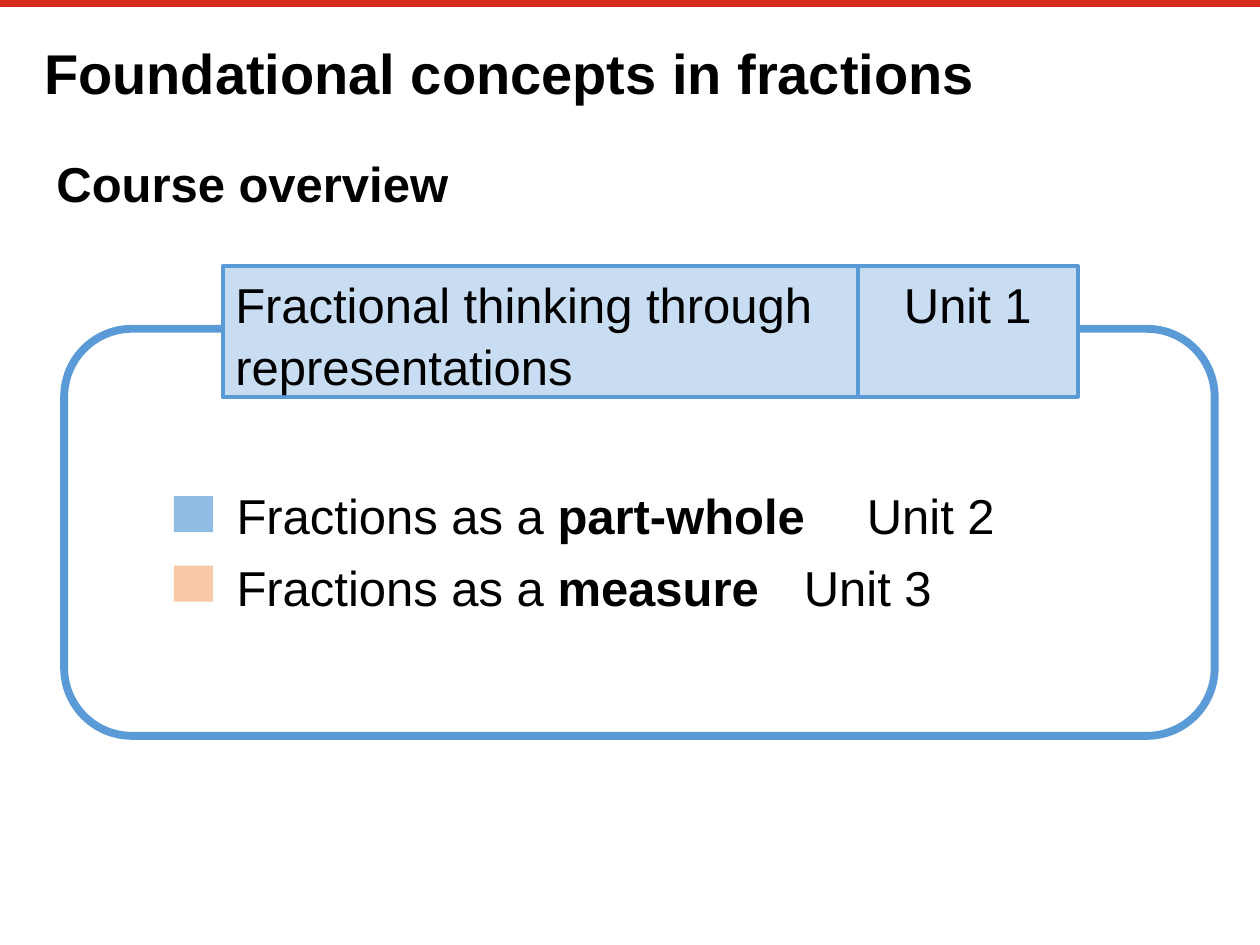
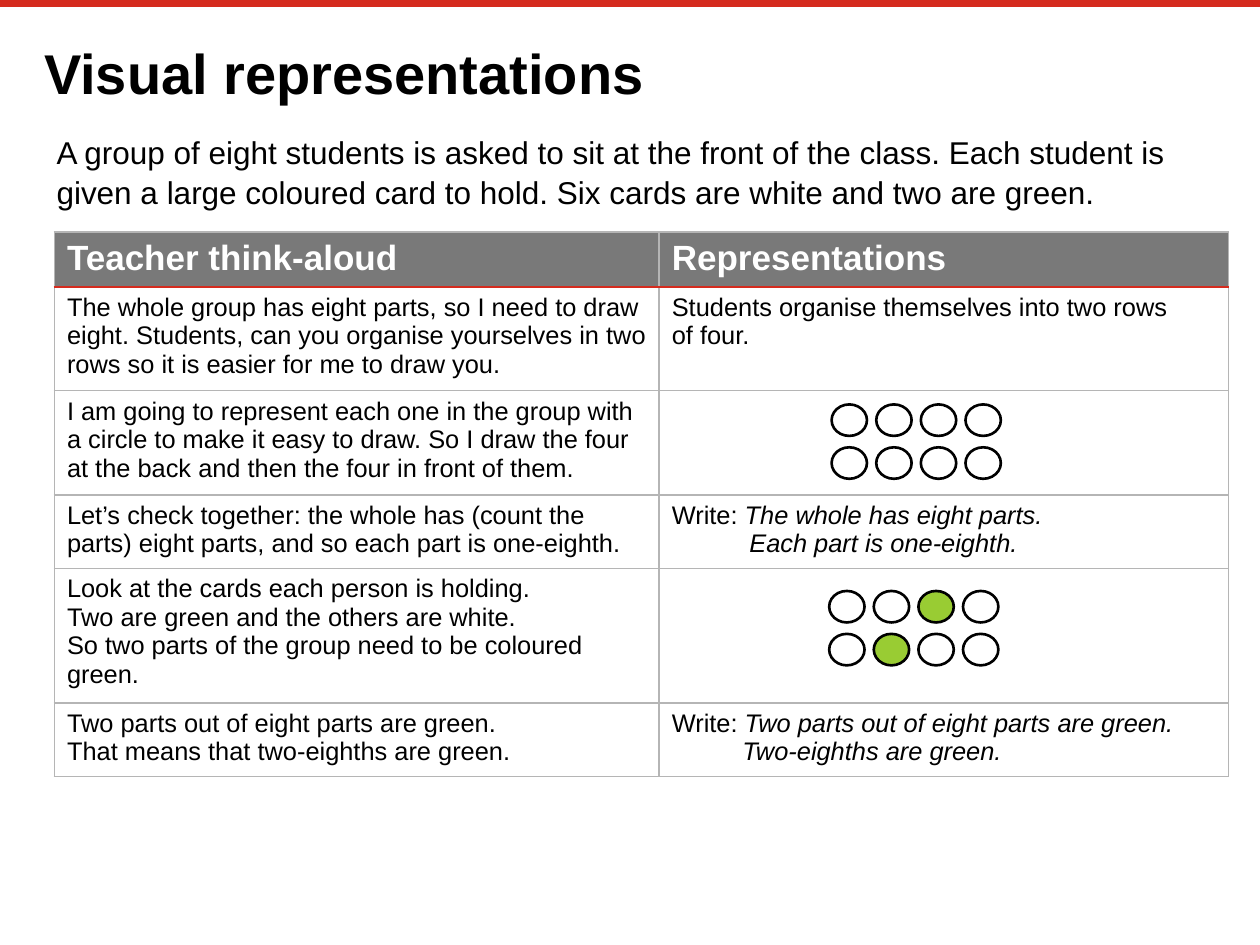
"""Build two slides on foundational concepts in fractions."""
from dataclasses import dataclass
from typing import Optional

from lxml.etree import SubElement
from pptx import Presentation
from pptx.dml.color import RGBColor
from pptx.enum.shapes import MSO_CONNECTOR as Connector, MSO_SHAPE as Preset
from pptx.enum.text import MSO_ANCHOR as Anchor, MSO_AUTO_SIZE as AutoSize, PP_ALIGN as Align
from pptx.oxml.ns import qn
from pptx.util import Pt


@dataclass(frozen=True)
class Theme:
    font: str = "Arial"
    red: str = "D52B1E"
    black: str = "000000"
    white: str = "FFFFFF"
    blue: str = "5A9AD7"
    pale_blue: str = "C8DDF2"
    part_whole: str = "91BCE4"
    measure: str = "F7C9A6"
    green: str = "99CC33"
    header: str = "797979"
    grid: str = "B5B5B5"
    title_size: float = 32
    large_size: float = 28
    intro_size: float = 18
    header_size: float = 20
    cell_size: float = 14.5
    line_spacing: float = 1.05


THEME = Theme()


@dataclass(frozen=True)
class Box:
    left: float
    top: float
    width: float
    height: float

    def lengths(self) -> tuple:
        return Pt(self.left), Pt(self.top), Pt(self.width), Pt(self.height)


@dataclass(frozen=True)
class Run:
    text: str
    bold: bool = False
    italic: bool = False


@dataclass(frozen=True)
class Line:
    runs: tuple
    indent: float = 0
    before: float = 0
    tab: Optional[float] = None


@dataclass(frozen=True)
class Look:
    size: float
    color: str = THEME.black
    align: Align = Align.LEFT
    spacing: float = THEME.line_spacing


@dataclass(frozen=True)
class Outline:
    color: str
    width: float


@dataclass(frozen=True)
class CircleGrid:
    left: float
    top: float
    green: tuple = ()


def plain(*texts: str, bold: bool = False) -> list:
    return [Line((Run(text, bold),)) for text in texts]


def written(first: str, second: str, indent: float) -> list:
    return [Line((Run("Write: "), Run(first, italic=True))),
            Line((Run(second, italic=True),), indent)]


LARGE = Look(THEME.large_size)
TITLE_BOX = Box(25.2, 20.16, 668.88, 34.56)
CONCEPTS_BOX = Box(99.36, 275.76, 589.68, 90)
UNIT_TAB = 421.5
CONCEPTS = [
    Line((Run("Fractions as a "), Run("part-whole", True), Run("\tUnit 2")), 35.86, 0, UNIT_TAB),
    Line((Run("Fractions as a "), Run("measure", True), Run("\tUnit 3")), 35.86, 6, UNIT_TAB),
]
TABLE_BOX = Box(31.1, 132.6, 671, 310.5)
COLUMN_WIDTHS = (345.6, 325.4)
ROW_HEIGHTS = (31.1, 59.4, 59.2, 42, 76.8, 42)
TABLE_ROWS = [
    (plain("Teacher think-aloud", bold=True), plain("Representations", bold=True)),
    (plain("The whole group has eight parts, so I need to draw eight. Students, can you "
           "organise yourselves in two rows so it is easier for me to draw you."),
     plain("Students organise themselves into two rows", "of four.")),
    (plain("I am going to represent each one in the group with a circle to make it easy to "
           "draw. So I draw the four at the back and then the four in front of them."), []),
    (plain("Let’s check together: the whole has (count the parts) eight parts, and so each "
           "part is one-eighth."),
     written("The whole has eight parts.", "Each part is one-eighth.", 44.3)),
    (plain("Look at the cards each person is holding.",
           "Two are green and the others are white.",
           "So two parts of the group need to be coloured green."), []),
    (plain("Two parts out of eight parts are green.", "That means that two-eighths are green."),
     written("Two parts out of eight parts are green.", "Two-eighths are green.", 40.3)),
]
CIRCLE_GRIDS = (CircleGrid(475.2, 231.1), CircleGrid(473.8, 337.7, ((0, 2), (1, 1))))


def rgb(color: str) -> RGBColor:
    return RGBColor.from_string(color)


def write_lines(frame, lines: list, look: Look) -> None:
    for index, line in enumerate(lines):
        paragraph = frame.paragraphs[0] if index == 0 else frame.add_paragraph()
        properties = paragraph._p.get_or_add_pPr()
        properties.set("marL", "0")
        properties.set("indent", str(Pt(line.indent)))
        SubElement(properties, qn("a:buNone"))
        if line.tab is not None:
            tabs = SubElement(properties, qn("a:tabLst"))
            SubElement(tabs, qn("a:tab"), pos=str(Pt(line.tab)), algn="l")
        paragraph.alignment = look.align
        paragraph.line_spacing = look.spacing
        paragraph.space_before = Pt(line.before)
        for part in line.runs:
            run = paragraph.add_run()
            run.text = part.text
            run.font.name = THEME.font
            run.font.size = Pt(look.size)
            run.font.bold = part.bold
            run.font.italic = part.italic
            run.font.color.rgb = rgb(look.color)


def fill_placeholder(shape, box: Box, lines: list, look: Look) -> None:
    shape.left, shape.top, shape.width, shape.height = box.lengths()
    frame = shape.text_frame
    frame.auto_size = AutoSize.NONE
    frame.vertical_anchor = Anchor.TOP
    frame.margin_left = frame.margin_top = frame.margin_right = frame.margin_bottom = 0
    write_lines(frame, lines, look)


def add_text(slide, box: Box, lines: list, look: Look) -> None:
    frame = slide.shapes.add_textbox(*box.lengths()).text_frame
    frame.word_wrap = True
    write_lines(frame, lines, look)


def add_preset(shapes, preset: Preset, box: Box, fill: Optional[str] = None,
               outline: Optional[Outline] = None):
    shape = shapes.add_shape(preset, *box.lengths())
    shape.shadow.inherit = False
    if fill:
        shape.fill.solid()
        shape.fill.fore_color.rgb = rgb(fill)
    else:
        shape.fill.background()
    if outline:
        shape.line.color.rgb = rgb(outline.color)
        shape.line.width = Pt(outline.width)
    else:
        shape.line.fill.background()
    return shape


def add_slide(presentation, layout_index: int, title: str):
    slide = presentation.slides.add_slide(presentation.slide_layouts[layout_index])
    band = slide.shapes.add_connector(Connector.STRAIGHT, 0, Pt(2.16), Pt(720), Pt(2.16))
    band.line.color.rgb = rgb(THEME.red)
    band.line.width = Pt(4.2)
    SubElement(band._element.spPr, qn("a:effectLst"))
    fill_placeholder(slide.shapes.title, TITLE_BOX, plain(title, bold=True),
                     Look(THEME.title_size))
    return slide


def set_borders(cell, top: Outline, bottom: Outline) -> None:
    side = Outline(THEME.grid, 1)
    properties = cell._tc.get_or_add_tcPr()
    edges = (("a:lnL", side), ("a:lnR", side), ("a:lnT", top), ("a:lnB", bottom))
    for index, (tag, outline) in enumerate(edges):
        border = SubElement(properties, qn(tag), w=str(Pt(outline.width)))
        solid = SubElement(border, qn("a:solidFill"))
        SubElement(solid, qn("a:srgbClr"), val=outline.color)
        properties.insert(index, border)


def add_think_aloud_table(slide) -> None:
    frame = slide.shapes.add_table(len(ROW_HEIGHTS), len(COLUMN_WIDTHS), *TABLE_BOX.lengths())
    table = frame.table
    table.horz_banding = False
    for column, width in zip(table.columns, COLUMN_WIDTHS):
        column.width = Pt(width)
    for row, height in zip(table.rows, ROW_HEIGHTS):
        row.height = Pt(height)
    grid, rule = Outline(THEME.grid, 1), Outline(THEME.red, 1.5)
    header = Look(THEME.header_size, THEME.white, spacing=1)
    body = Look(THEME.cell_size, spacing=1)
    for row_index, contents in enumerate(TABLE_ROWS):
        for column_index, lines in enumerate(contents):
            cell = table.cell(row_index, column_index)
            if row_index == 0:
                cell.fill.solid()
                cell.fill.fore_color.rgb = rgb(THEME.header)
            else:
                cell.fill.background()
            set_borders(cell, rule if row_index == 1 else grid, rule if row_index == 0 else grid)
            write_lines(cell.text_frame, lines, body if row_index else header)


def add_circles(slide, grid: CircleGrid) -> None:
    group = slide.shapes.add_group_shape()
    for row in range(2):
        for column in range(4):
            box = Box(grid.left + 25.5 * column, grid.top + 24.5 * row, 20.2, 18)
            fill = THEME.green if (row, column) in grid.green else None
            add_preset(group.shapes, Preset.OVAL, box, fill, Outline(THEME.black, 1.5))


def build_overview(presentation) -> None:
    slide = add_slide(presentation, 1, "Foundational concepts in fractions")
    fill_placeholder(slide.placeholders[1], CONCEPTS_BOX, CONCEPTS, LARGE)
    add_preset(slide.shapes, Preset.ROUNDED_RECTANGLE, Box(36.7, 187.9, 657.4, 232.6),
               outline=Outline(THEME.blue, 4.5))
    headings = (
        (Box(127.4, 151.9, 362.9, 74.9), "Fractional thinking through representations", Align.LEFT),
        (Box(490.3, 151.9, 125.5, 74.9), "Unit 1", Align.CENTER),
    )
    for box, text, align in headings:
        shape = add_preset(slide.shapes, Preset.RECTANGLE, box, THEME.pale_blue,
                           Outline(THEME.blue, 2.25))
        shape.text_frame.word_wrap = True
        shape.text_frame.vertical_anchor = Anchor.TOP
        write_lines(shape.text_frame, plain(text), Look(THEME.large_size, align=align))
    add_text(slide, Box(25.2, 82.8, 249.1, 41), plain("Course overview", bold=True), LARGE)
    for index, color in enumerate((THEME.part_whole, THEME.measure)):
        add_preset(slide.shapes, Preset.RECTANGLE, Box(99.4, 283.5 + 39.7 * index, 22.3, 20.6),
                   color)


def build_representations(presentation) -> None:
    slide = add_slide(presentation, 5, "Visual representations")
    add_text(slide, Box(25.2, 71.3, 668.2, 51.1),
             plain("A group of eight students is asked to sit at the front of the class. Each "
                   "student is given a large coloured card to hold. Six cards are white and two "
                   "are green."), Look(THEME.intro_size))
    add_think_aloud_table(slide)
    for grid in CIRCLE_GRIDS:
        add_circles(slide, grid)


def main() -> None:
    presentation = Presentation()
    presentation.slide_width, presentation.slide_height = Pt(720), Pt(540)
    build_overview(presentation)
    build_representations(presentation)
    presentation.save("out.pptx")


if __name__ == "__main__":
    main()
